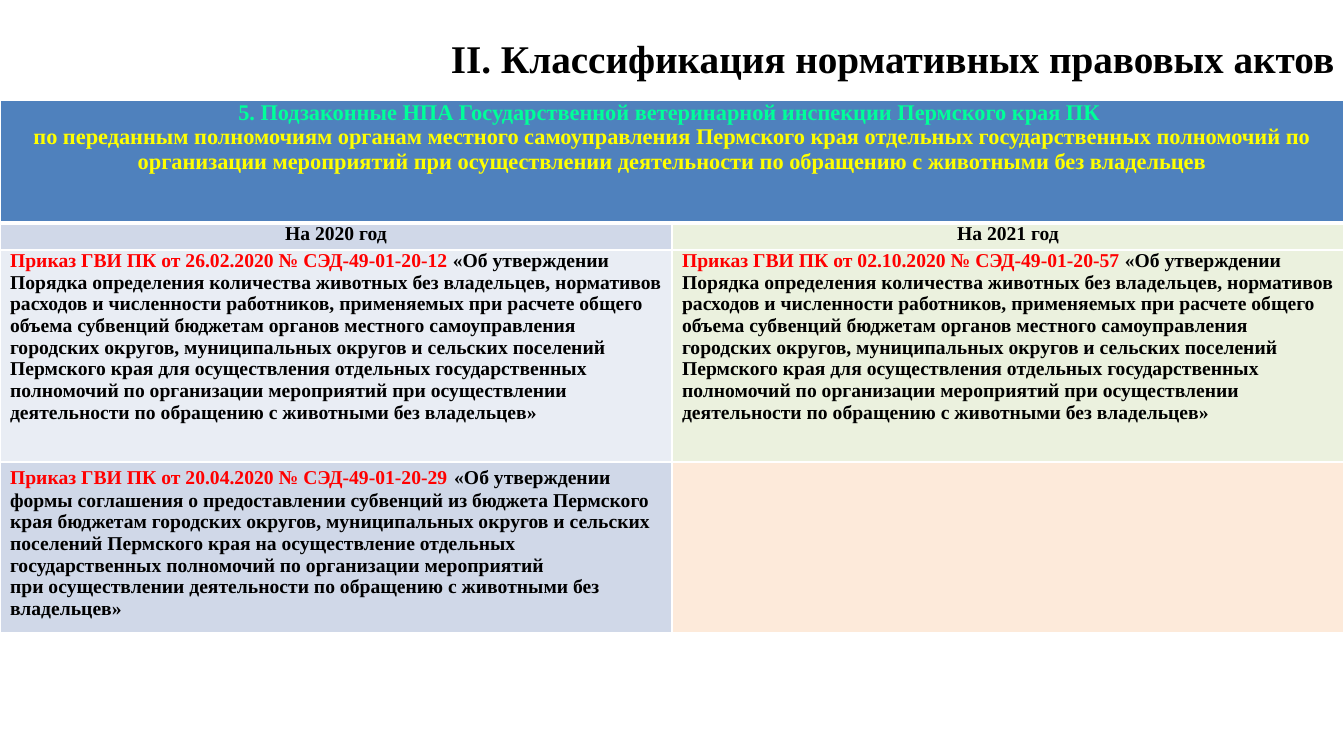
from dataclasses import dataclass

from lxml import etree
from pptx import Presentation
from pptx.dml.color import RGBColor
from pptx.enum.text import MSO_ANCHOR, MSO_AUTO_SIZE, PP_ALIGN
from pptx.oxml.ns import qn
from pptx.util import Cm, Pt

LEFT, CENTER, RIGHT = PP_ALIGN.LEFT, PP_ALIGN.CENTER, PP_ALIGN.RIGHT
BOTTOM = MSO_ANCHOR.BOTTOM
NO_AUTOFIT = MSO_AUTO_SIZE.NONE
TITLE_ONLY = 5


@dataclass(frozen=True)
class Theme:
    font: str = "Times New Roman"
    title_size: int = 28
    banner_size: int = 16
    gap_size: int = 18
    body_size: int = 14
    text: str = "000000"
    order: str = "FF0000"
    issuer: str = "00FF99"
    subject: str = "FFFF00"
    border: str = "FFFFFF"
    banner: str = "4F81BD"
    blue: str = "D0D8E8"
    pale_blue: str = "E9EDF4"
    green: str = "EBF1DE"
    peach: str = "FDEADA"


THEME = Theme()
SLIDE_W, SLIDE_H = 33.87, 19.05
ROW_HEIGHTS = (3.1, 0.68, 5.34, 4.31)
FILLS = (
    (THEME.banner, THEME.banner),
    (THEME.blue, THEME.green),
    (THEME.pale_blue, THEME.green),
    (THEME.blue, THEME.peach),
)

TITLE = "II. Классификация нормативных правовых актов"
ISSUER = "5. Подзаконные НПА Государственной ветеринарной инспекции Пермского края ПК "
SUBJECT = (
    "по переданным полномочиям органам местного самоуправления Пермского края "
    "отдельных государственных полномочий по организации мероприятий при "
    "осуществлении деятельности по обращению с животными без владельцев"
)
YEARS = ("На 2020 год", "На 2021 год")
COUNT_ORDERS = (
    "Приказ ГВИ ПК от 26.02.2020 № СЭД-49-01-20-12 ",
    "Приказ ГВИ ПК от 02.10.2020 № СЭД-49-01-20-57 ",
)
COUNT_SUBJECT = (
    "«Об утверждении Порядка определения количества животных без владельцев, "
    "нормативов расходов и численности работников, применяемых при расчете общего "
    "объема субвенций бюджетам органов местного самоуправления городских округов, "
    "муниципальных округов и сельских поселений Пермского края для осуществления "
    "отдельных государственных полномочий по организации мероприятий при "
    "осуществлении деятельности по обращению с животными без владельцев»"
)
FORM_ORDER = "Приказ ГВИ ПК от 20.04.2020 № СЭД-49-01-20-29"
FORM_SUBJECT = (
    "«Об утверждении формы соглашения о предоставлении субвенций из бюджета "
    "Пермского края бюджетам городских округов, муниципальных округов и сельских "
    "поселений Пермского края на осуществление отдельных государственных "
    "полномочий по организации мероприятий "
)
FORM_SUBJECT_END = (
    "при осуществлении деятельности по обращению с животными без владельцев»"
)


def format_paragraph(p, size, align):
    p.alignment = align
    p.font.name, p.font.size, p.font.bold = THEME.font, Pt(size), True


def add_run(p, text, color):
    r = p.add_run()
    r.text = text
    r.font.color.rgb = RGBColor.from_string(color)
    return r


def set_borders(cell, bottom):
    """Give the cell 1 pt borders and a bottom one of the given width."""
    tc_pr = cell._tc.get_or_add_tcPr()
    widths = {"a:lnL": 1, "a:lnR": 1, "a:lnT": 1, "a:lnB": bottom}
    for i, (tag, width) in enumerate(widths.items()):
        ln = etree.Element(qn(tag), w=str(Pt(width)))
        fill = etree.SubElement(ln, qn("a:solidFill"))
        etree.SubElement(fill, qn("a:srgbClr"), val=THEME.border)
        tc_pr.insert(i, ln)


def add_title(slide, left, top, width, height):
    sp = slide.shapes.title
    sp.left, sp.top, sp.width, sp.height = map(Cm, (left, top, width, height))
    tf = sp.text_frame
    tf.auto_size, tf.vertical_anchor, tf.word_wrap = NO_AUTOFIT, BOTTOM, True
    p = tf.paragraphs[0]
    format_paragraph(p, THEME.title_size, RIGHT)
    p.line_spacing = 1.5
    add_run(p, TITLE, THEME.text)


def fill_banner(tf):
    for i, (text, color) in enumerate(((ISSUER, THEME.issuer), (SUBJECT, THEME.subject))):
        p = tf.add_paragraph() if i else tf.paragraphs[0]
        format_paragraph(p, THEME.banner_size, CENTER)
        add_run(p, text, color)


def fill_form_order(p):
    format_paragraph(p, THEME.body_size, LEFT)
    add_run(p, FORM_ORDER, THEME.order)
    add_run(p, " ", THEME.order).font.size = Pt(THEME.gap_size)
    add_run(p, FORM_SUBJECT, THEME.text)
    p.add_line_break()
    add_run(p, FORM_SUBJECT_END, THEME.text)


def add_acts_table(slide, left, top, width):
    box = map(Cm, (left, top, width, sum(ROW_HEIGHTS)))
    table = slide.shapes.add_table(len(ROW_HEIGHTS), len(YEARS), *box).table
    table.first_row = table.horz_banding = False
    for row, (height, fills) in enumerate(zip(ROW_HEIGHTS, FILLS)):
        table.rows[row].height = Cm(height)
        for col, color in enumerate(fills):
            cell = table.cell(row, col)
            cell.margin_top = cell.margin_bottom = 0
            cell.fill.solid()
            cell.fill.fore_color.rgb = RGBColor.from_string(color)
            set_borders(cell, bottom=1 if row else 3)

    table.cell(0, 0).merge(table.cell(0, 1))
    fill_banner(table.cell(0, 0).text_frame)
    for col, (year, order) in enumerate(zip(YEARS, COUNT_ORDERS)):
        p = table.cell(1, col).text_frame.paragraphs[0]
        format_paragraph(p, THEME.body_size, CENTER)
        add_run(p, year, THEME.text)
        p = table.cell(2, col).text_frame.paragraphs[0]
        format_paragraph(p, THEME.body_size, LEFT)
        add_run(p, order, THEME.order)
        add_run(p, COUNT_SUBJECT, THEME.text)
    fill_form_order(table.cell(3, 0).text_frame.paragraphs[0])


def main():
    prs = Presentation()
    prs.slide_width, prs.slide_height = Cm(SLIDE_W), Cm(SLIDE_H)
    slide = prs.slides.add_slide(prs.slide_layouts[TITLE_ONLY])
    add_title(slide, 0, 0.13, SLIDE_W, 2.06)
    add_acts_table(slide, 0, 2.52, SLIDE_W)
    prs.save("out.pptx")


if __name__ == "__main__":
    main()
